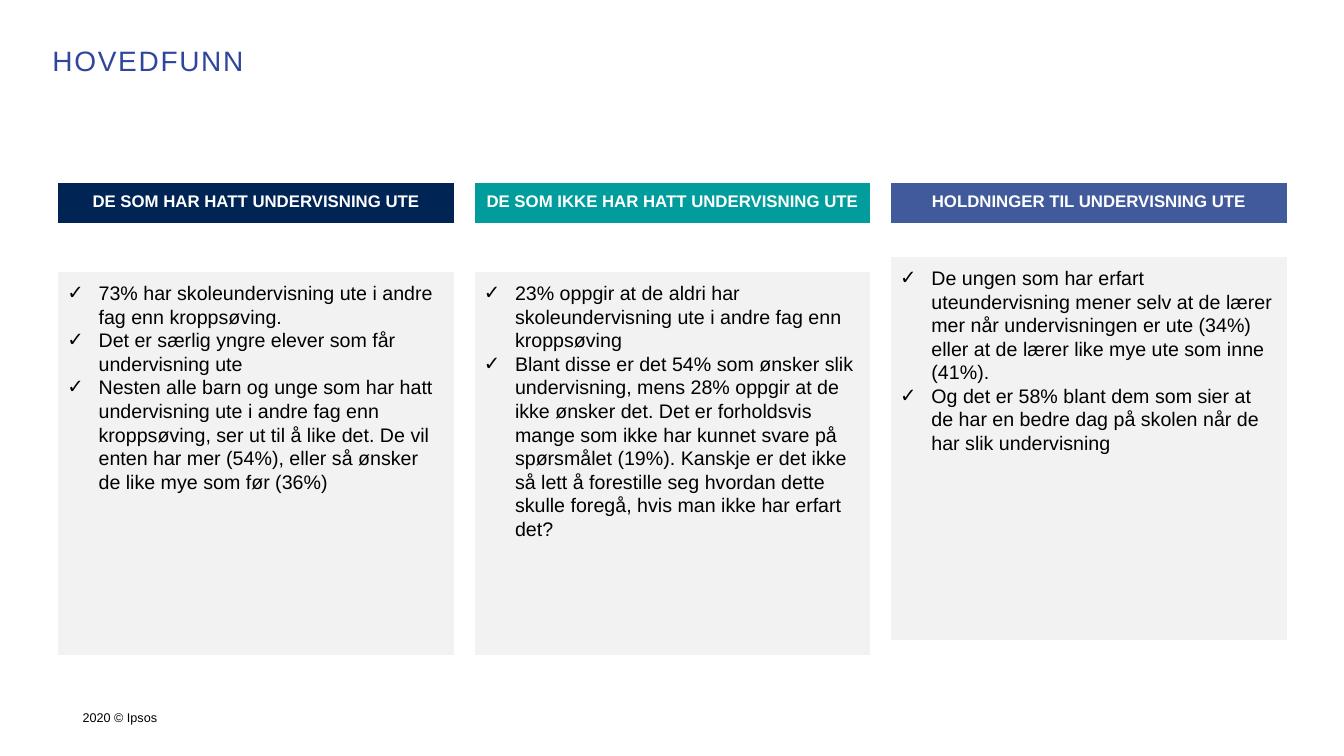
from lxml.etree import SubElement
from pptx import Presentation
from pptx.dml.color import RGBColor
from pptx.enum.shapes import MSO_SHAPE
from pptx.enum.text import MSO_ANCHOR, PP_ALIGN
from pptx.oxml.ns import qn
from pptx.util import Inches, Pt

COLORS = {
    "title": "2F469C",
    "navy": "002554",
    "teal": "009D9C",
    "blue": "405A9C",
    "panel": "F2F2F2",
    "white": "FFFFFF",
    "black": "000000",
}
FONT = "Arial"
COLUMN_LEFT, COLUMN_PITCH, COLUMN_WIDTH = 0.57, 4.13, 3.94
BULLET_INDENT = Inches(0.31)

COLUMNS = [
    ("DE SOM HAR HATT UNDERVISNING UTE", "navy", 2.69, [
        "73% har skoleundervisning ute i andre fag enn kroppsøving.",
        "Det er særlig yngre elever som får undervisning ute",
        "Nesten alle barn og unge som har hatt undervisning ute i andre fag enn "
        "kroppsøving, ser ut til å like det. De vil enten har mer (54%), eller så "
        "ønsker de like mye som før (36%)",
    ]),
    ("DE SOM IKKE HAR HATT UNDERVISNING UTE", "teal", 2.69, [
        "23% oppgir at de aldri har skoleundervisning ute i andre fag enn kroppsøving",
        "Blant disse er det 54% som ønsker slik undervisning, mens 28% oppgir at de "
        "ikke ønsker det. Det er forholdsvis mange som ikke har kunnet svare på "
        "spørsmålet (19%). Kanskje er det ikke så lett å forestille seg hvordan dette "
        "skulle foregå, hvis man ikke har erfart det?",
    ]),
    ("HOLDNINGER TIL UNDERVISNING UTE", "blue", 2.54, [
        "De ungen som har erfart uteundervisning mener selv at de lærer mer når "
        "undervisningen er ute (34%) eller at de lærer like mye ute som inne (41%).",
        "Og det er 58% blant dem som sier at de har en bedre dag på skolen når de "
        "har slik undervisning",
    ]),
]


def set_font(paragraph, size, color, bold=False):
    """Set the font of a whole paragraph."""
    font = paragraph.font
    font.name = FONT
    font.size = Pt(size)
    font.bold = bold
    font.color.rgb = RGBColor.from_string(COLORS[color])


def set_frame(frame, horizontal, vertical, anchor):
    """Set wrapping, margins and anchor of a text frame."""
    frame.word_wrap = True
    frame.margin_left = frame.margin_right = Inches(horizontal)
    frame.margin_top = frame.margin_bottom = Inches(vertical)
    frame.vertical_anchor = anchor


def add_text(slide, text, left, top, width, margin, anchor, size, color):
    """Add a one-line text box and return its paragraph."""
    box = slide.shapes.add_textbox(Inches(left), Inches(top), Inches(width), Inches(0.4))
    set_frame(box.text_frame, margin, 0.05, anchor)
    paragraph = box.text_frame.paragraphs[0]
    paragraph.text = text
    set_font(paragraph, size, color)
    return paragraph


def add_block(slide, left, top, height, fill):
    """Add a filled rectangle of column width with a white outline."""
    shape = slide.shapes.add_shape(MSO_SHAPE.RECTANGLE, Inches(left), Inches(top),
                                   Inches(COLUMN_WIDTH), Inches(height))
    shape.shadow.inherit = False
    shape.fill.solid()
    shape.fill.fore_color.rgb = RGBColor.from_string(COLORS[fill])
    shape.line.color.rgb = RGBColor.from_string(COLORS["white"])
    shape.line.width = Pt(1)
    return shape


def add_header(slide, text, left, fill):
    """Add a coloured column header."""
    frame = add_block(slide, left, 1.81, 0.41, fill).text_frame
    set_frame(frame, 0, 0, MSO_ANCHOR.MIDDLE)
    paragraph = frame.paragraphs[0]
    paragraph.text = text
    paragraph.alignment = PP_ALIGN.CENTER
    paragraph.line_spacing = 0.8
    set_font(paragraph, 12, "white", bold=True)


def add_panel(slide, findings, left, top):
    """Add a grey panel with check-marked findings."""
    frame = add_block(slide, left, top, 3.82, "panel").text_frame
    set_frame(frame, 0.1, 0.1, MSO_ANCHOR.TOP)
    frame.text = "\n".join(findings)
    for paragraph in frame.paragraphs:
        paragraph.alignment = PP_ALIGN.LEFT
        properties = paragraph._p.get_or_add_pPr()
        properties.set("marL", str(BULLET_INDENT))
        properties.set("indent", str(-BULLET_INDENT))
        SubElement(properties, qn("a:buFont"), typeface=FONT)
        SubElement(properties, qn("a:buChar"), char="✓")
        set_font(paragraph, 14, "black")


def main():
    """Build and save the slide."""
    presentation = Presentation()
    presentation.slide_width = Inches(13.33)
    presentation.slide_height = Inches(7.5)
    slide = presentation.slides.add_slide(presentation.slide_layouts[6])

    add_text(slide, "2020 © Ipsos", 0.82, 6.92, 11.43, 0, MSO_ANCHOR.MIDDLE, 9, "black")
    for index, (header, color, panel_top, findings) in enumerate(COLUMNS):
        left = COLUMN_LEFT + index * COLUMN_PITCH
        add_panel(slide, findings, left, panel_top)
        add_header(slide, header, left, color)
    title = add_text(slide, "HOVEDFUNN", 0.44, 0.42, 12.45, 0.08, MSO_ANCHOR.TOP, 20, "title")
    title.line_spacing = 0.9
    title.runs[0]._r.get_or_add_rPr().set("spc", "120")

    presentation.save("out.pptx")


if __name__ == "__main__":
    main()
